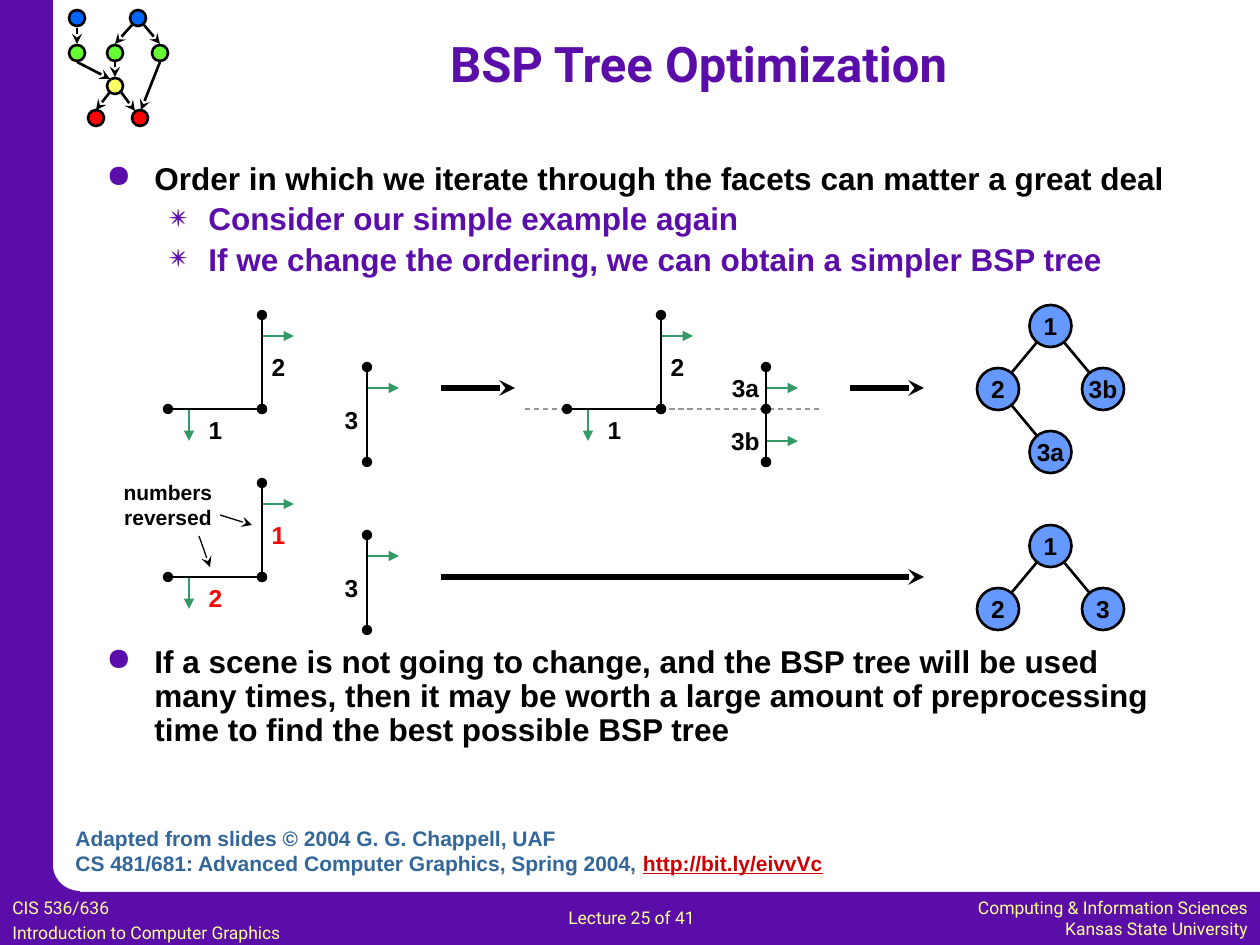
from pptx import Presentation, util as u
from pptx.dml.color import RGBColor
from pptx.enum import dml, shapes, text as t
from pptx.oxml.ns import qn
from lxml import etree

PX = 914400 / 126
BLACK = RGBColor(0, 0, 0)
WHITE = RGBColor(255, 255, 255)
PURPLE = RGBColor(0x5B, 0x0D, 0xAA)
CREAM = RGBColor(0xFF, 0xFF, 0x99)
TEAL = RGBColor(0x33, 0x99, 0x66)
GREY = RGBColor(0x96, 0x96, 0x96)
STEEL = RGBColor(0x33, 0x66, 0x99)
NODE = RGBColor(0x66, 0x99, 0xFF)
LIME = RGBColor(0x66, 0xFF, 0x33)
BLUE = RGBColor(0, 0x66, 0xFF)
YELLOW = RGBColor(0xFF, 0xFF, 0x66)
RED = RGBColor(255, 0, 0)
LINK = RGBColor(0xCC, 0, 0)

LEFT, MID, RIGHT = t.PP_ALIGN.LEFT, t.PP_ALIGN.CENTER, t.PP_ALIGN.RIGHT
RECT, OVAL = shapes.MSO_SHAPE.RECTANGLE, shapes.MSO_SHAPE.OVAL


def px(*nums):
    return [u.Emu(round(n * PX)) for n in nums]


def add(parent, tag, **attrs):
    node = etree.SubElement(parent, qn(tag))
    for key, val in attrs.items():
        node.set(key, str(val))
    return node


def style(run, size=14, color=BLACK, bold=True, face="Arial", under=False):
    font = run.font
    font.name, font.size, font.bold = face, u.Pt(size), bold
    font.color.rgb = color
    if under:
        font.underline = True


def write(shape, lines, align=LEFT, anchor=t.MSO_ANCHOR.TOP, gap=0, wrap=True, **fmt):
    """Fill a shape with one paragraph for each line."""
    frame = shape.text_frame
    frame.word_wrap = wrap
    frame.vertical_anchor = anchor
    for i, line in enumerate(lines):
        para = frame.add_paragraph() if i else frame.paragraphs[0]
        para.text = line
        para.alignment = align
        if i and gap:
            para.space_before = u.Pt(gap)
        for run in para.runs:
            style(run, **fmt)
    return frame


def label(slide, box, *lines, **fmt):
    return write(slide.shapes.add_textbox(*px(*box)), lines, **fmt)


def block(slide, kind, box, fill, edge=None):
    shape = slide.shapes.add_shape(kind, *px(*box))
    shape.shadow.inherit = False
    shape.fill.solid()
    shape.fill.fore_color.rgb = fill
    if edge is None:
        shape.line.fill.background()
    else:
        shape.line.color.rgb = edge
        shape.line.width = u.Pt(1.5)
    return shape


def line(slide, x1, y1, x2, y2, color=BLACK, width=1.5, head=None, tail=None, dash=False):
    wire = slide.shapes.add_connector(shapes.MSO_CONNECTOR.STRAIGHT, *px(x1, y1, x2, y2))
    wire.line.color.rgb = color
    wire.line.width = u.Pt(width)
    if dash:
        wire.line.dash_style = dml.MSO_LINE.DASH
    ln = wire.line._get_or_add_ln()
    for tag, kind in (("a:headEnd", head), ("a:tailEnd", tail)):
        if kind:
            add(ln, tag, type=kind)
    add(wire._element.spPr, "a:effectLst")


def border(slide):
    block(slide, RECT, (0, 892, 1260, 53), PURPLE)
    block(slide, RECT, (0, 0, 53, 945), PURPLE)
    block(slide, RECT, (25, 863, 55, 55), PURPLE)
    block(slide, OVAL, (53, 839, 55, 52), WHITE)
    fmt = dict(size=10, color=CREAM, bold=False, face="Roboto")
    label(slide, (905, 891, 355, 54), "Computing & Information Sciences",
          "Kansas State University", align=RIGHT, **fmt)
    label(slide, (0, 891, 372, 55), "CIS 536/636",
          "Introduction to Computer Graphics", gap=2, **fmt)
    label(slide, (556, 901, 191, 34), "Lecture 25 of 41", **fmt)


def graph(slide, x, y):
    """Small directed graph in the corner."""
    dots = {LIME: [(0, 35), (38, 35), (83, 35)], BLUE: [(0, 0), (61, 0)],
            YELLOW: [(38, 68)], RED: [(19, 100), (63, 100)]}
    for color, spots in dots.items():
        for dx, dy in spots:
            block(slide, OVAL, (x + dx, y + dy, 16, 16), color, BLACK)
    for x1, y1, x2, y2 in [(8, 18, 8, 34), (63, 15, 46, 34), (75, 15, 91, 34),
                           (8, 52, 41, 69), (46, 52, 46, 67), (91, 52, 72, 100),
                           (52, 82, 66, 101), (41, 82, 27, 100)]:
        line(slide, x + x1, y + y1, x + x2, y + y2, tail="stealth")


def points(slide, box, items):
    """Bulleted list of (level, line) pairs."""
    frame = label(slide, box, *(line for _, line in items), gap=3.6, size=18)
    looks = [(48, -48, "●", BLACK), (102, -39, "✴", PURPLE)]
    for para, (level, _) in zip(frame.paragraphs, items):
        left, hang, mark, color = looks[level]
        prop = para._p.get_or_add_pPr()
        prop.set("marL", str(px(left)[0]))
        prop.set("indent", str(px(hang)[0]))
        add(add(prop, "a:buClr"), "a:srgbClr", val=PURPLE)
        add(prop, "a:buChar", char=mark)
        para.level = level
        para.line_spacing = 0.9
        para.runs[0].font.color.rgb = color


def scene(slide, x, y, floor, wall, color=BLACK, split=False):
    """Three facets with their normals; split cuts the third in two."""
    rays = [(21, 94, 21, 126), (94, 21, 126, 21), (199, 73, 231, 73)]
    bars = [(0, 94, 94, 94), (94, 0, 94, 94), (199, 52, 199, 147)]
    tags = [(21, 94, 53, floor, color), (84, 31, 53, wall, color)]
    if split:
        line(slide, x - 42, y + 94, x + 252, y + 94, GREY, 0.75, dash=True)
        rays.append((199, 126, 231, 126))
        bars.append((199, 94, 199, 147))
        tags += [(147, 52, 63, "3a", BLACK), (147, 105, 63, "3b", BLACK)]
    else:
        tags.append((157, 84, 53, "3", BLACK))
    for x1, y1, x2, y2 in rays:
        line(slide, x + x1, y + y1, x + x2, y + y2, TEAL, 0.75, tail="triangle")
    for x1, y1, x2, y2 in bars:
        line(slide, x + x1, y + y1, x + x2, y + y2, head="oval", tail="oval")
    for dx, dy, width, name, ink in tags:
        label(slide, (x + dx, y + dy, width, 42), name, align=MID, color=ink)


def tree(slide, x, y, nodes, edges):
    """Nodes map a name to its (column, row)."""
    spots = {name: (x + 52.5 * col, y + 63 * row) for name, (col, row) in nodes.items()}
    for top, low in edges:
        (x1, y1), (x2, y2) = spots[top], spots[low]
        line(slide, x1 + 21, y1 + 21, x2 + 21, y2 + 21)
    for name, (left, top) in spots.items():
        disc = block(slide, OVAL, (left, top, 42, 42), NODE, BLACK)
        write(disc, [name], align=MID, anchor=t.MSO_ANCHOR.MIDDLE, wrap=False)


def note(slide, x, y):
    label(slide, (x, y, 126, 63), "numbers\nreversed", align=MID, size=12)
    line(slide, x + 115, y + 42, x + 147, y + 52, width=0.75, tail="stealth")
    line(slide, x + 94, y + 63, x + 105, y + 94, width=0.75, tail="stealth")


def heading(slide, box, line):
    title = slide.shapes.title
    title.left, title.top, title.width, title.height = px(*box)
    write(title, [line], align=MID, anchor=t.MSO_ANCHOR.MIDDLE,
          size=28, color=PURPLE, face="Roboto")


def credit(slide, box):
    frame = label(slide, box, "Adapted from slides © 2004 G. G. Chappell, UAF",
                  "CS 481/681: Advanced Computer Graphics, Spring 2004, ",
                  size=12, color=STEEL)
    run = frame.paragraphs[1].add_run()
    run.text = "http://bit.ly/eivvVc"
    style(run, size=12, color=LINK, under=True)


def main():
    deck = Presentation()
    deck.slide_width, deck.slide_height = px(1260, 945)
    slide = deck.slides.add_slide(deck.slide_layouts[5])
    border(slide)
    graph(slide, 69, 10)
    heading(slide, (158, 10, 1081, 105), "BSP Tree Optimization")
    points(slide, (94, 157, 1095, 130), [
        (0, "Order in which we iterate through the facets can matter a great deal"),
        (1, "Consider our simple example again"),
        (1, "If we change the ordering, we can obtain a simpler BSP tree")])
    points(slide, (94, 640, 1095, 120), [
        (0, "If a scene is not going to change, and the BSP tree will be used many times, "
            "then it may be worth a large amount of preprocessing time to find the best "
            "possible BSP tree")])
    scene(slide, 168, 315, "1", "2")
    scene(slide, 567, 315, "1", "2", split=True)
    scene(slide, 168, 483, "2", "1", RED)
    tree(slide, 977, 305, {"1": (1, 0), "2": (0, 1), "3b": (2, 1), "3a": (1, 2)},
         [("1", "2"), ("1", "3b"), ("2", "3a")])
    tree(slide, 977, 525, {"1": (1, 0), "2": (0, 1), "3": (2, 1)},
         [("1", "2"), ("1", "3")])
    for x1, x2, y in [(441, 515, 388), (850, 924, 388), (441, 924, 577)]:
        line(slide, x1, y, x2, y, width=3, tail="stealth")
    note(slide, 105, 473)
    credit(slide, (63, 819, 800, 63))
    deck.save("out.pptx")


if __name__ == "__main__":
    main()
